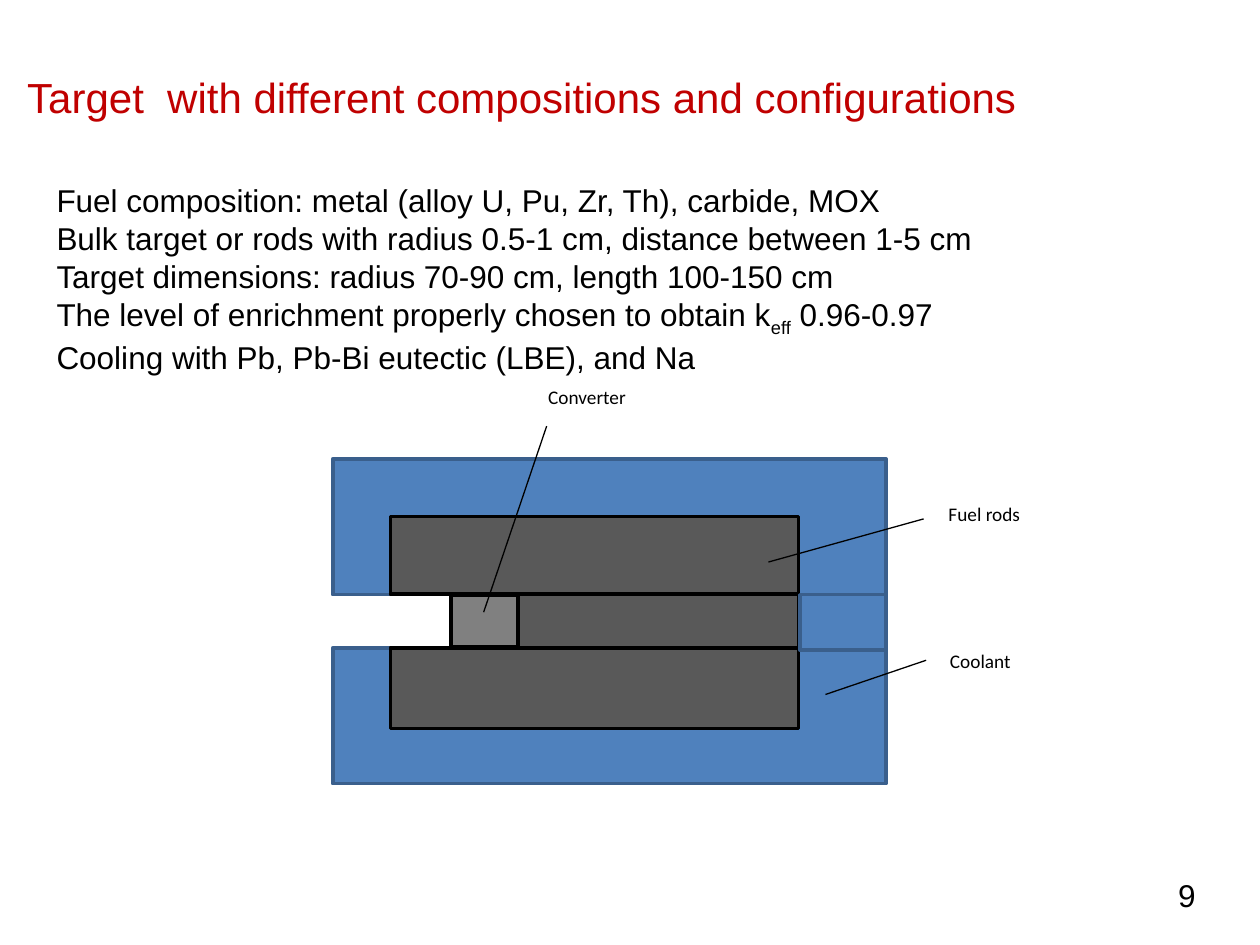
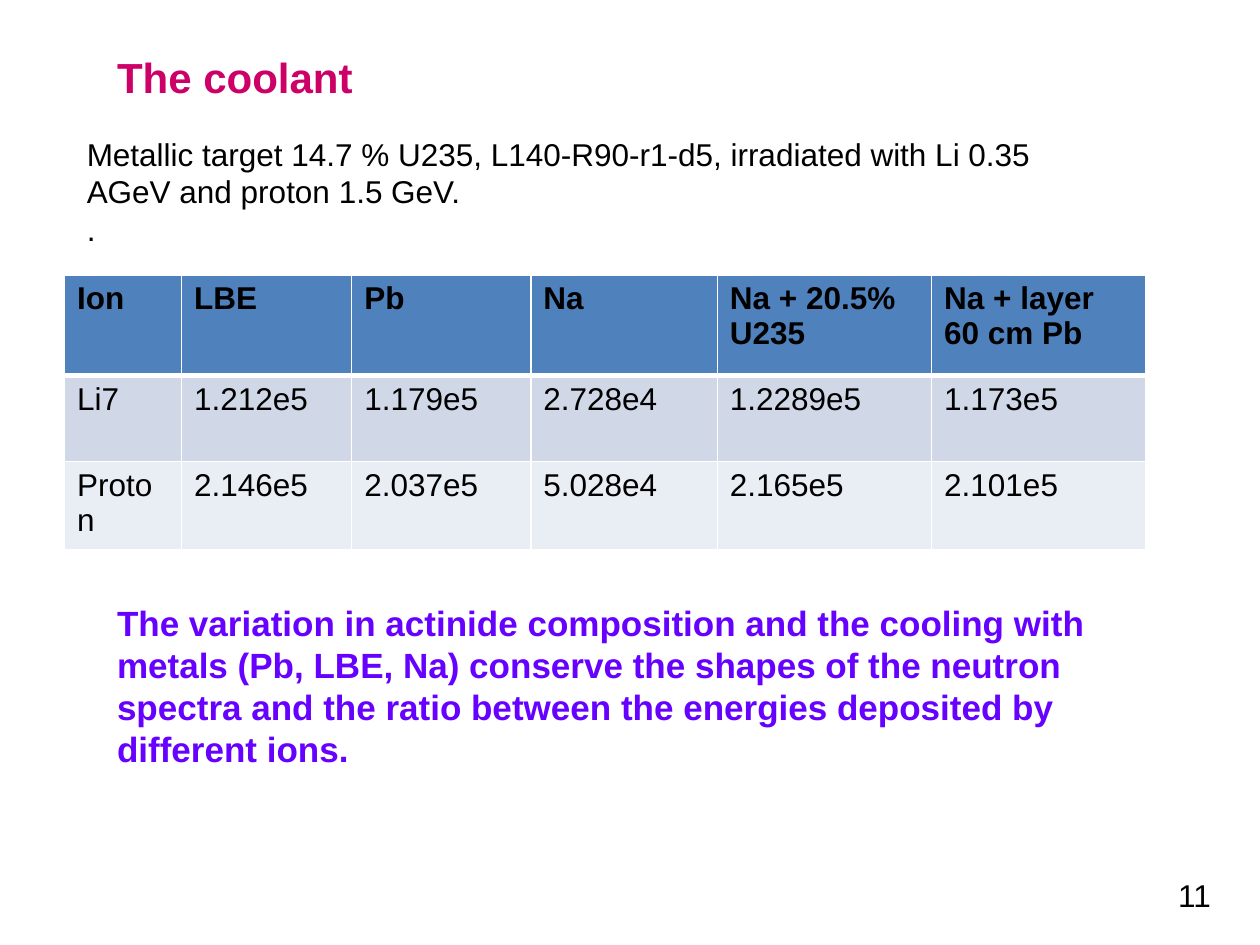
from lxml import etree
from pptx import Presentation
from pptx.dml.color import RGBColor
from pptx.enum.shapes import MSO_CONNECTOR, MSO_SHAPE
from pptx.enum.text import MSO_ANCHOR, MSO_AUTO_SIZE, PP_ALIGN
from pptx.oxml.ns import qn
from pptx.util import Cm, Pt

RECTANGLE = MSO_SHAPE.RECTANGLE
STRAIGHT = MSO_CONNECTOR.STRAIGHT
GROW = MSO_AUTO_SIZE.SHAPE_TO_FIT_TEXT
TOP = MSO_ANCHOR.TOP
LEFT = PP_ALIGN.LEFT

BLACK = RGBColor(0, 0, 0)
WHITE = RGBColor(255, 255, 255)
RED = RGBColor(0xC0, 0, 0)
MAGENTA = RGBColor(0xCC, 0, 0x66)
VIOLET = RGBColor(0x66, 0, 0xFF)
BLUE = RGBColor(0x4F, 0x81, 0xBD)
BLUE_EDGE = RGBColor(0x3A, 0x5F, 0x8C)
FUEL_GRAY = RGBColor(0x59, 0x59, 0x59)
CONVERTER_GRAY = RGBColor(0x80, 0x80, 0x80)
ROW_FILLS = [RGBColor(0xD0, 0xD8, 0xE8), RGBColor(0xE9, 0xED, 0xF4)]

BODY_FONT = "Arial"
LABEL_FONT = "Calibri"
TITLE_SIZE = 24
BODY_SIZE = 18

COOLANT = (BLUE, BLUE_EDGE)
FUEL = (FUEL_GRAY, BLACK)
CONVERTER = (CONVERTER_GRAY, BLACK)
TARGET_PARTS = [
    (COOLANT, 6.71, 9.25, 11.15, 2.74),
    (FUEL, 7.87, 10.41, 8.23, 1.57),
    (CONVERTER, 9.09, 12.01, 1.35, 1.02),
    (FUEL, 10.44, 11.99, 5.66, 1.12),
    (COOLANT, 6.71, 13.06, 11.15, 2.74),
    (FUEL, 7.87, 13.06, 8.23, 1.63),
    (COOLANT, 16.13, 11.99, 1.73, 1.12),
]
CALLOUTS = [
    ("Fuel rods", (15.49, 11.33, 18.62, 10.46), (18.87, 9.96)),
    ("Coolant", (16.64, 14, 18.67, 13.31), (18.9, 12.93)),
    ("Converter", (9.75, 12.34, 11.02, 8.59), (10.8, 7.62)),
]

FUEL_FACTS = [
    "Fuel composition: metal (alloy U, Pu, Zr, Th), carbide, MOX",
    "Bulk target or rods with radius 0.5-1 cm, distance between 1-5 cm",
    "Target dimensions: radius 70-90 cm, length 100-150 cm",
    "The level of enrichment properly chosen to obtain k",
    "Cooling with Pb, Pb-Bi eutectic (LBE), and Na",
]
K_EFF_LINE = 3
COOLANT_FACTS = [
    "Metallic target 14.7 % U235, L140-R90-r1-d5, irradiated with Li 0.35 "
    "AGeV and proton 1.5 GeV.",
    ".",
]
CONCLUSION = (
    "The variation in actinide composition and the cooling with metals "
    "(Pb, LBE, Na) conserve the shapes of the neutron spectra and the ratio "
    "between the energies deposited by different ions."
)
ENERGY_ROWS = [
    ["Ion", "LBE", "Pb", "Na", "Na + 20.5% U235", "Na + layer 60 cm Pb"],
    ["Li7", "1.212e5", "1.179e5", "2.728e4", "1.2289e5", "1.173e5"],
    ["Proton", "2.146e5", "2.037e5", "5.028e4", "2.165e5", "2.101e5"],
]
COLUMN_WIDTHS = [2.36, 3.43, 3.61, 3.76, 4.32, 4.32]
ROW_HEIGHTS = [2.03, 1.73, 1.66]


def style_span(span, size, color, font=BODY_FONT, bold=False):
    span.font.name = font
    span.font.size = Pt(size)
    span.font.bold = bold
    span.font.color.rgb = color


def add_text(page, place, lines, size=BODY_SIZE, color=BLACK, bold=False):
    box = page.shapes.add_textbox(*map(Cm, place))
    frame = box.text_frame
    frame.word_wrap = True
    frame.auto_size = GROW
    frame.text = "\n".join(lines)
    for para in frame.paragraphs:
        for span in para.runs:
            style_span(span, size, color, bold=bold)
    return frame


def add_page(deck, title, title_place, title_color, number, bold=False):
    page = deck.slides.add_slide(deck.slide_layouts[6])
    add_text(page, title_place, [title], TITLE_SIZE, title_color, bold)
    add_text(page, (23.5, 17.53, 1.4, 1.02), [str(number)])
    return page


def add_k_subscript(para):
    for text, baseline in (("eff", "-25000"), (" 0.96-0.97", "0")):
        span = para.add_run()
        span.text = text
        style_span(span, BODY_SIZE, BLACK)
        span._r.get_or_add_rPr().set("baseline", baseline)


def add_block(group, place, fill, edge, edge_width):
    block = group.shapes.add_shape(RECTANGLE, *map(Cm, place))
    block.shadow.inherit = False
    block.fill.solid()
    block.fill.fore_color.rgb = fill
    block.line.color.rgb = edge
    block.line.width = Pt(edge_width)
    return block


def add_leader(group, ends):
    leader = group.shapes.add_connector(STRAIGHT, *map(Cm, ends))
    leader.line.color.rgb = BLACK
    leader.line.width = Pt(0.75)
    etree.SubElement(leader._element.spPr, qn("a:effectLst"))


def add_label(group, text, corner):
    frame = add_block(group, (*corner, 2.59, 0.84), WHITE, WHITE, 0.5).text_frame
    frame.vertical_anchor = TOP
    frame.text = text
    para = frame.paragraphs[0]
    para.alignment = LEFT
    para.line_spacing = 1.07
    para.space_after = Pt(8)
    style_span(para.runs[0], 11, BLACK, LABEL_FONT)


def add_target_diagram(page):
    group = page.shapes.add_group_shape()
    for (fill, edge), *place in TARGET_PARTS:
        add_block(group, place, fill, edge, 2)
    for _, ends, _ in CALLOUTS:
        add_leader(group, ends)
    for text, _, corner in CALLOUTS:
        add_label(group, text, corner)


def set_borders(cell, widths):
    properties = cell._tc.get_or_add_tcPr()
    for side, width in widths.items():
        border = etree.SubElement(properties, qn(f"a:ln{side}"), w=str(Pt(width)))
        fill = etree.SubElement(border, qn("a:solidFill"))
        etree.SubElement(fill, qn("a:srgbClr"), val=str(WHITE))


def add_energy_table(page):
    table = page.shapes.add_table(
        len(ENERGY_ROWS), len(COLUMN_WIDTHS), Cm(1.3), Cm(5.54),
        Cm(sum(COLUMN_WIDTHS)), Cm(sum(ROW_HEIGHTS)),
    ).table
    for column, width in zip(table.columns, COLUMN_WIDTHS):
        column.width = Cm(width)
    for row, height in zip(table.rows, ROW_HEIGHTS):
        row.height = Cm(height)
    fills = [BLUE, *ROW_FILLS]
    for row_index, values in enumerate(ENERGY_ROWS):
        is_header = row_index == 0
        top = 3 if row_index == 1 else 1
        bottom = 3 if is_header else 1
        for column_index, value in enumerate(values):
            cell = table.cell(row_index, column_index)
            set_borders(cell, {"L": 1, "R": 1, "T": top, "B": bottom})
            cell.fill.solid()
            cell.fill.fore_color.rgb = fills[row_index]
            cell.text_frame.text = value
            span = cell.text_frame.paragraphs[0].runs[0]
            style_span(span, BODY_SIZE, BLACK, bold=is_header)


def build_target_page(deck):
    page = add_page(
        deck, "Target  with different compositions and configurations",
        (0.3, 1.32, 24.41, 1.27), RED, 9,
    )
    frame = add_text(page, (0.89, 3.53, 23.6, 4.11), FUEL_FACTS)
    add_k_subscript(frame.paragraphs[K_EFF_LINE])
    add_target_diagram(page)


def build_coolant_page(deck):
    page = add_page(
        deck, "The coolant", (2.11, 0.91, 20.4, 1.27), MAGENTA, 11, bold=True,
    )
    add_text(page, (1.5, 2.59, 20.4, 2.57), COOLANT_FACTS)
    add_energy_table(page)
    add_text(page, (2.11, 12.01, 21, 3.68), [CONCLUSION], 20, VIOLET, bold=True)


def main():
    deck = Presentation()
    deck.slide_width = Cm(25.4)
    deck.slide_height = Cm(19.05)
    build_target_page(deck)
    build_coolant_page(deck)
    deck.save("out.pptx")


if __name__ == "__main__":
    main()
